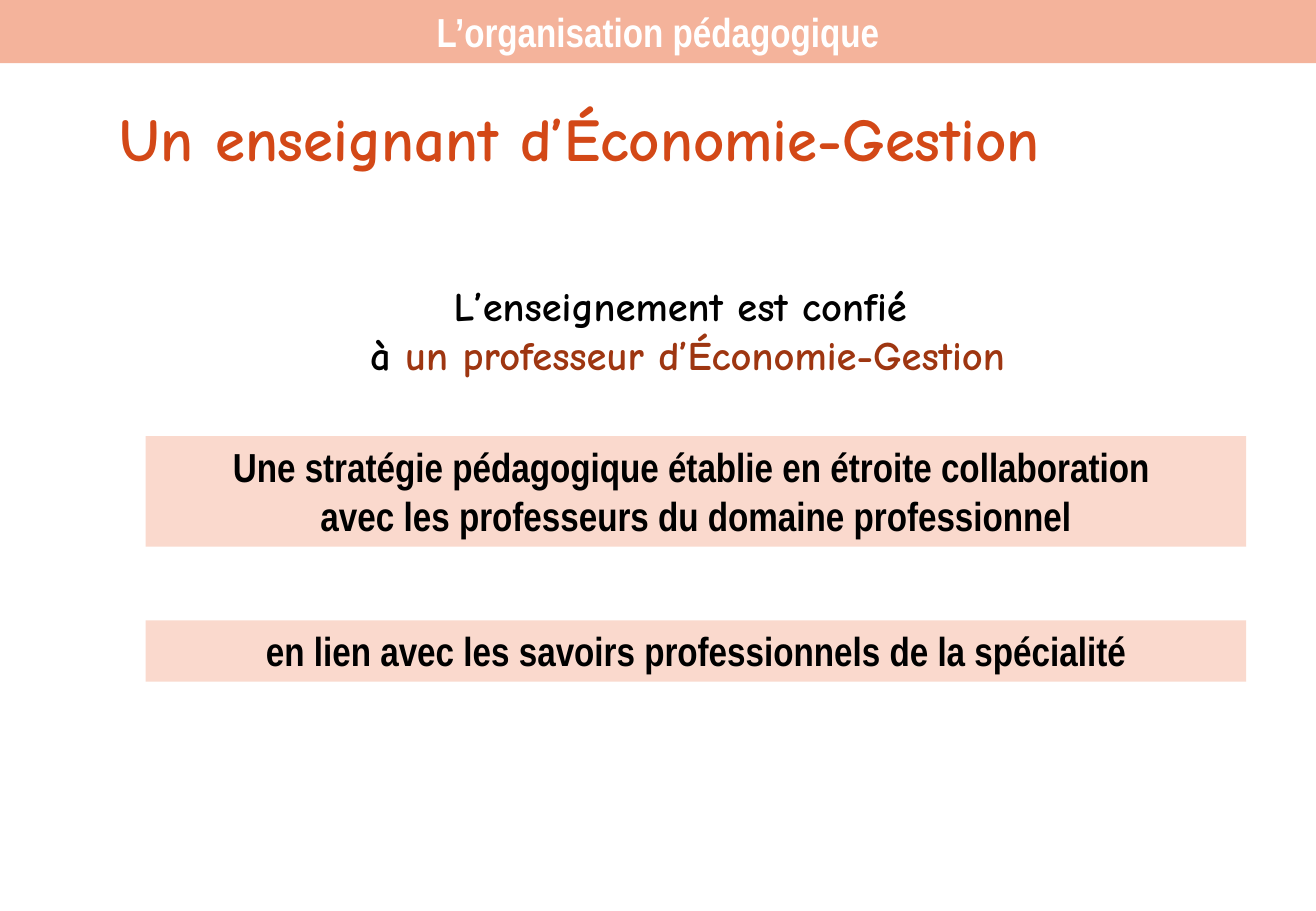
"""Build the slide about the teacher in charge of Économie-Gestion."""
from dataclasses import dataclass

from pptx import Presentation
from pptx.dml.color import RGBColor
from pptx.enum.shapes import MSO_SHAPE
from pptx.enum.text import MSO_ANCHOR, PP_ALIGN
from pptx.util import Pt

RECTANGLE = MSO_SHAPE.RECTANGLE
LEFT, CENTER = PP_ALIGN.LEFT, PP_ALIGN.CENTER
TOP, MIDDLE = MSO_ANCHOR.TOP, MSO_ANCHOR.MIDDLE


@dataclass(frozen=True)
class Theme:
    hand_font: str = "Comic Neue"
    band_font: str = "Arial Narrow"
    title_size: int = 36
    body_size: int = 24
    title: str = "D34817"
    accent: str = "9E3611"
    text: str = "000000"
    header_text: str = "FFFFFF"
    header_fill: str = "F4B39B"
    band_fill: str = "FAD9CD"


THEME = Theme()
SLIDE_WIDTH, SLIDE_HEIGHT = 780, 540
BAND_LEFT, BAND_WIDTH = 86.4, 652.3
BAND_PADDING, BAND_LINE_HEIGHT = 7.2, 29.2

HEADER = "L’organisation pédagogique"
TITLE = "Un enseignant d’Économie-Gestion"
INTRODUCTION = [
    [("L’enseignement est confié", THEME.text)],
    [(" à ", THEME.text), ("un professeur d’Économie-Gestion", THEME.accent)],
]
BANDS = [
    (258.5, ["Une stratégie pédagogique établie en étroite collaboration ",
             "avec les professeurs du domaine professionnel"]),
    (367.7, ["en lien avec les savoirs professionnels de la spécialité"]),
]


def write(shape, lines, font, size, alignment=CENTER, anchor=TOP):
    frame = shape.text_frame
    frame.word_wrap = True
    frame.vertical_anchor = anchor
    frame.text = "\n".join(pieces[0][0] for pieces in lines)
    for paragraph, pieces in zip(frame.paragraphs, lines):
        paragraph.alignment = alignment
        for text, _ in pieces[1:]:
            paragraph.add_run().text = text
        for run, (_, color) in zip(paragraph.runs, pieces):
            run.font.name = font
            run.font.size = Pt(size)
            run.font.bold = True
            run.font.color.rgb = RGBColor.from_string(color)


def add_text(slide, box, lines, size, alignment):
    shape = slide.shapes.add_textbox(*map(Pt, box))
    write(shape, lines, THEME.hand_font, size, alignment)


def add_band(slide, box, lines, fill, color, anchor):
    shape = slide.shapes.add_shape(RECTANGLE, *map(Pt, box))
    shape.shadow.inherit = False
    shape.fill.solid()
    shape.fill.fore_color.rgb = RGBColor.from_string(fill)
    shape.line.fill.background()
    colored_lines = [[(line, color)] for line in lines]
    write(shape, colored_lines, THEME.band_font, THEME.body_size, anchor=anchor)


def main():
    presentation = Presentation()
    presentation.slide_width, presentation.slide_height = Pt(SLIDE_WIDTH), Pt(SLIDE_HEIGHT)
    slide = presentation.slides.add_slide(presentation.slide_layouts[6])
    add_text(slide, (64, 56, 630, 51), [[(TITLE, THEME.title)]], THEME.title_size, LEFT)
    add_text(slide, (148.3, 163.2, 509.8, 65.5), INTRODUCTION, THEME.body_size, CENTER)
    for top, lines in BANDS:
        height = BAND_PADDING + BAND_LINE_HEIGHT * len(lines)
        add_band(slide, (BAND_LEFT, top, BAND_WIDTH, height), lines,
                 THEME.band_fill, THEME.text, TOP)
    add_band(slide, (0, 0, SLIDE_WIDTH, 37.4), [HEADER],
             THEME.header_fill, THEME.header_text, MIDDLE)
    presentation.save("out.pptx")


if __name__ == "__main__":
    main()
